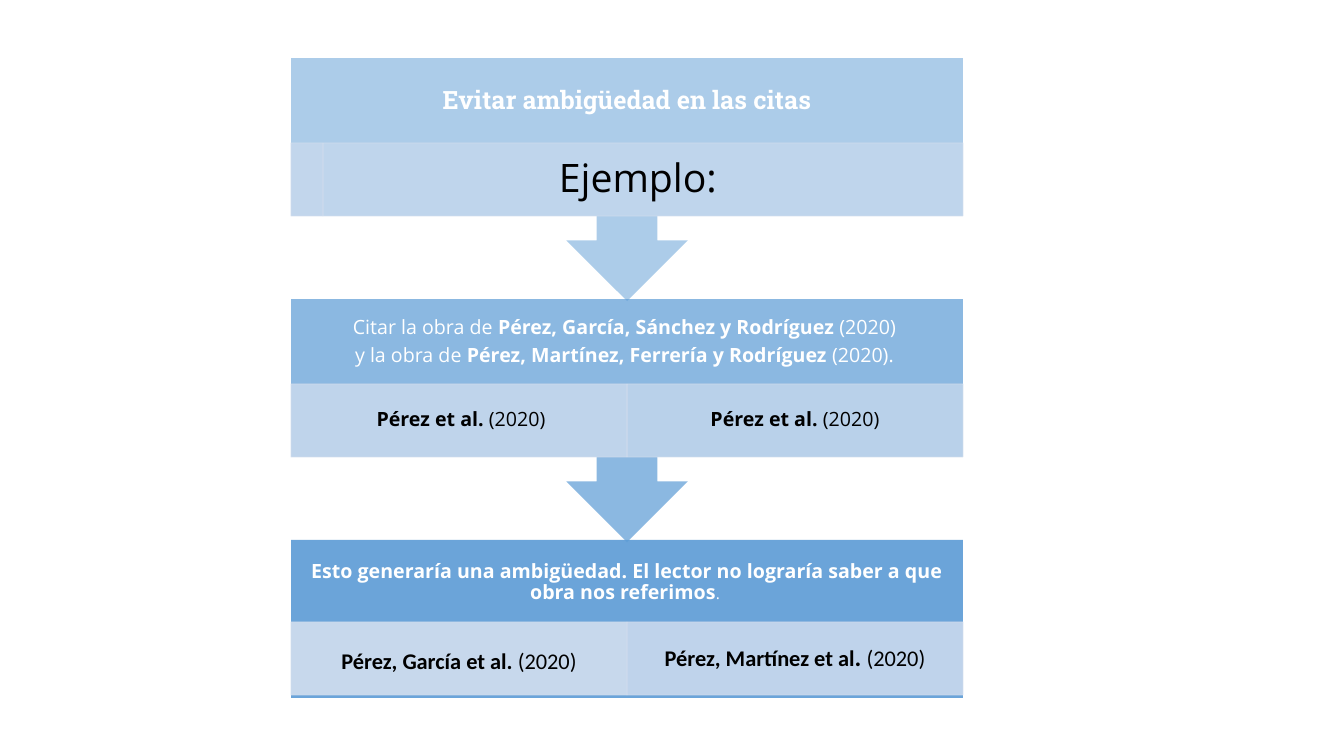
"""Build the slide on avoiding ambiguity in citations as a three-step flow."""
import pptx
import pptx.dml.color
import pptx.enum.shapes
import pptx.enum.text
import pptx.util
import lxml.etree

PIXEL = 914400 / 100.8
BLUE = pptx.dml.color.RGBColor(0x5B, 0x9B, 0xD5)
PALE = pptx.dml.color.RGBColor(0xD2, 0xDE, 0xEF)
WHITE = pptx.dml.color.RGBColor(0xFF, 0xFF, 0xFF)
BLACK = pptx.dml.color.RGBColor(0, 0, 0)
RECTANGLE = pptx.enum.shapes.MSO_SHAPE.RECTANGLE
CALLOUT = pptx.enum.shapes.MSO_SHAPE.UP_ARROW_CALLOUT
LEFT, WIDTH, HALF = 291, 672, 336
HEADER_HEIGHT, PANEL_HEIGHT = 86, 73

presentation = pptx.Presentation()
presentation.slide_width = round(1344 * PIXEL)
presentation.slide_height = round(756 * PIXEL)
slide = presentation.slides.add_slide(presentation.slide_layouts[6])


def add_block(kind, box, color, opacity, outlined=False):
    """Add a translucent shape at a pixel box."""
    shape = slide.shapes.add_shape(kind, *[round(length * PIXEL) for length in box])
    shape.shadow.inherit = False
    shape.fill.solid()
    shape.fill.fore_color.rgb = color
    shape.line.fill.background()
    opacities = [(shape.fill, opacity)]
    if outlined:
        shape.line.fill.solid()
        shape.line.color.rgb = color
        shape.line.width = pptx.util.Pt(0.5)
        opacities.append((shape.line.fill, 90))
    for fill, percent in opacities:
        color_element = fill._xPr.find(".//" + pptx.oxml.ns.qn("a:srgbClr"))
        alpha = lxml.etree.SubElement(color_element, pptx.oxml.ns.qn("a:alpha"))
        alpha.set("val", str(percent * 1000))
    return shape


def write_text(shape, insets, font, color, paragraphs):
    """Write centred paragraphs of (text, size, bold) runs."""
    frame = shape.text_frame
    frame.word_wrap = True
    frame.vertical_anchor = pptx.enum.text.MSO_ANCHOR.MIDDLE
    frame.margin_left, frame.margin_top, frame.margin_right, frame.margin_bottom = [
        round(inset * PIXEL) for inset in insets]
    for index, runs in enumerate(paragraphs):
        paragraph = frame.add_paragraph() if index else frame.paragraphs[0]
        paragraph.alignment = pptx.enum.text.PP_ALIGN.CENTER
        paragraph.line_spacing = 0.9
        paragraph.space_after = pptx.util.Pt(5)
        for text, size, bold in runs:
            run = paragraph.add_run()
            run.text = text
            run.font.name = font
            run.font.size = pptx.util.Pt(size)
            run.font.bold = bold
            run.font.color.rgb = color


ambiguous = [[("Pérez et al. ", 14, True), ("(2020)", 14, False)]]
steps = [
    {
        "box": (540, 158), "kind": RECTANGLE, "opacity": 90, "panel_top": 622,
        "inset": 11, "font": "Open Sans",
        "header": [[("Esto generaría una ambigüedad. El lector no lograría saber a que "
                     "obra nos referimos", 14, True), (". ", 11, False)]],
        "panels": [
            (LEFT, HALF, 90, (11, 10, 11, 2), "Calibri",
             [[("Pérez, García et al. ", 16, True), ("(2020)", 16, False)]]),
            (LEFT + HALF, HALF, 82, (12, 2, 12, 2), "Calibri",
             [[("Pérez, Martínez et al", 16, True), (".", 18, True),
               (" ", 16, True), ("(2020)", 16, False)]]),
        ],
    },
    {
        "box": (299, 243), "kind": CALLOUT, "opacity": 70, "panel_top": 384,
        "inset": 11, "font": "Open Sans",
        "header": [
            [("Citar la obra de\u00a0", 14, False),
             ("Pérez, García, Sánchez y Rodríguez", 14, True),
             (" (2020)\u00a0", 14, False)],
            [("y la obra de\u00a0", 14, False),
             ("Pérez, Martínez, Ferrería y Rodríguez ", 14, True),
             ("(2020). ", 14, False)],
        ],
        "panels": [
            (LEFT, HALF, 74, (15, 2, 11, 2), "Open Sans", ambiguous),
            (LEFT + HALF, HALF, 66, (11, 2, 11, 2), "Open Sans", ambiguous),
        ],
    },
    {
        "box": (58, 243), "kind": CALLOUT, "opacity": 50, "panel_top": 143,
        "inset": 14, "font": "Roboto Slab",
        "header": [[("Evitar ambigüedad en las citas", 18, True)]],
        "panels": [
            (LEFT, 32, 58, None, None, []),
            (LEFT + 32, WIDTH - 32, 50, (22, 4, 22, 4), "Open Sans",
             [[("Ejemplo: ", 28, False)]]),
        ],
    },
]

for step in steps:
    top, height = step["box"]
    block = add_block(step["kind"], (LEFT, top, WIDTH, height), BLUE, step["opacity"])
    if step["kind"] == CALLOUT:
        block.rotation = 180
    header = slide.shapes.add_textbox(
        *[round(length * PIXEL) for length in (LEFT, top, WIDTH, HEADER_HEIGHT)])
    write_text(header, [step["inset"]] * 4, step["font"], WHITE, step["header"])
    for left, width, opacity, insets, font, paragraphs in step["panels"]:
        panel = add_block(RECTANGLE, (left, step["panel_top"], width, PANEL_HEIGHT),
                          PALE, opacity, outlined=True)
        if paragraphs:
            write_text(panel, insets, font, BLACK, paragraphs)

presentation.save("out.pptx")
